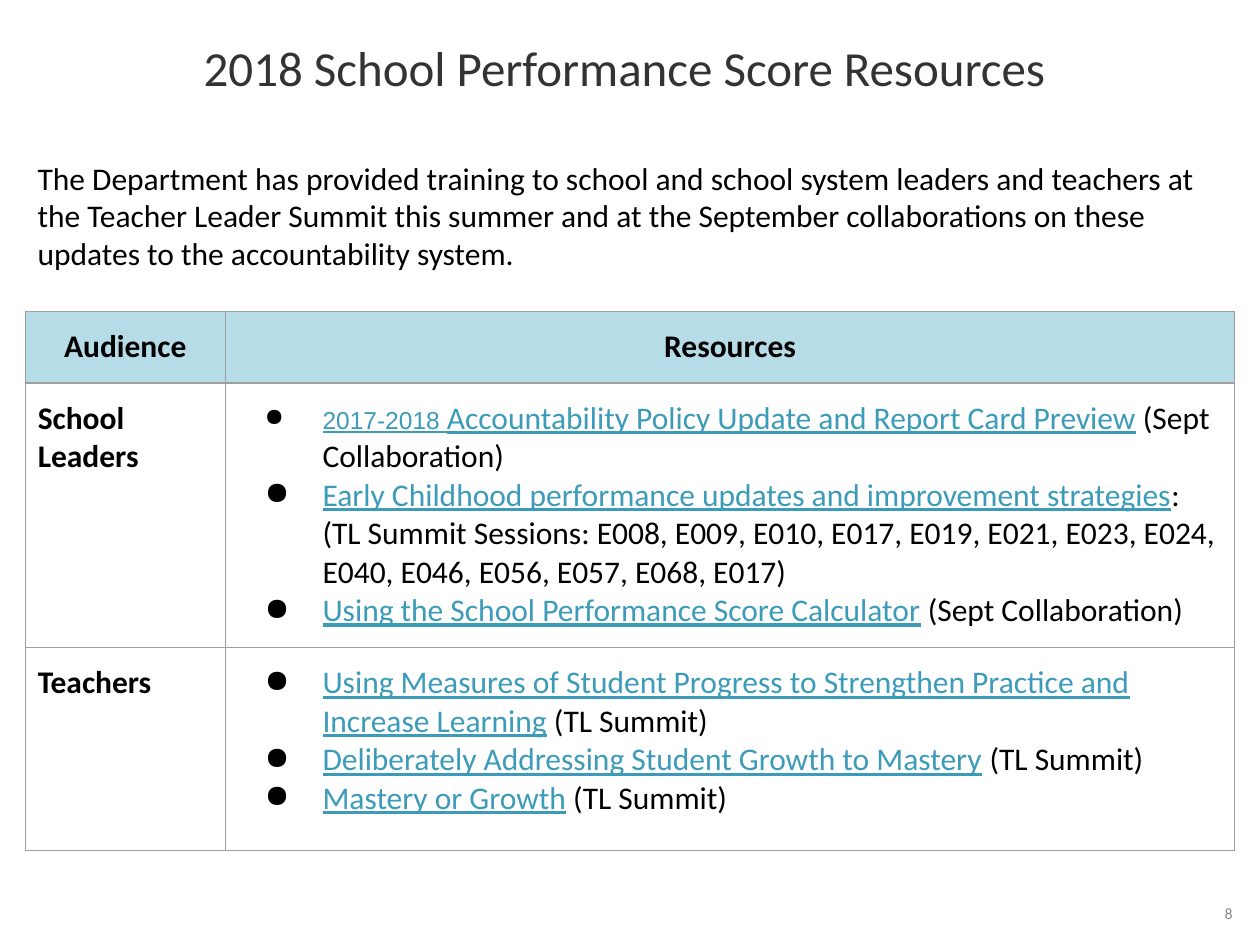
"""Build the slide listing 2018 School Performance Score resources by audience."""
from typing import NamedTuple

from lxml.etree import SubElement
from pptx import Presentation
from pptx.dml.color import RGBColor
from pptx.enum.text import MSO_ANCHOR as Anchor, PP_ALIGN as Align
from pptx.oxml.ns import qn
from pptx.util import Inches, Pt

BLACK, LINK, TITLE, GREY = "000000", "3D9BBA", "333333", "8A8A8A"
HEADER_FILL, BORDER = "B6DDE7", "9E9E9E"


class Span(NamedTuple):
    text: str
    link: bool = False
    small: bool = False


class Audience(NamedTuple):
    name: str
    height: float
    resources: list[list[Span]]


def resource(title: str, note: str) -> list[Span]:
    return [Span(title, link=True), Span(note)]


AUDIENCES = [
    Audience("School Leaders", 2.1, [
        [Span("2017-2018 ", link=True, small=True),
         Span("Accountability Policy Update and Report Card Preview", link=True),
         Span(" ", small=True),
         Span("(Sept Collaboration)")],
        resource("Early Childhood performance updates and improvement strategies",
                 ": (TL Summit Sessions: E008, E009, E010, E017, E019, E021, E023, "
                 "E024, E040, E046, E056, E057, E068, E017)"),
        resource("Using the School Performance Score Calculator", " (Sept Collaboration)"),
    ]),
    Audience("Teachers", 1.61, [
        resource("Using Measures of Student Progress to Strengthen Practice and "
                 "Increase Learning", " (TL Summit)"),
        resource("Deliberately Addressing Student Growth to Mastery", " (TL Summit)"),
        resource("Mastery or Growth", " (TL Summit)"),
    ]),
]


def color(hex_string: str) -> RGBColor:
    return RGBColor.from_string(hex_string)


def style(font, size: float, hex_string: str = BLACK, bold: bool = False) -> None:
    font.name, font.size, font.bold = "Calibri", Pt(size), bold
    font.color.rgb = color(hex_string)


def write(frame, text: str, size: float, hex_string: str = BLACK,
          bold: bool = False, align=Align.LEFT) -> None:
    frame.word_wrap = True
    paragraph = frame.paragraphs[0]
    paragraph.text, paragraph.alignment = text, align
    style(paragraph.font, size, hex_string, bold)


def add_text(slide, box: tuple, text: str, size: float, hex_string: str,
             align=Align.LEFT, anchor=Anchor.TOP) -> None:
    shape = slide.shapes.add_textbox(*map(Inches, box))
    shape.text_frame.vertical_anchor = anchor
    write(shape.text_frame, text, size, hex_string, align=align)


def format_cell(cell, fill: str | None = None) -> None:
    cell.margin_left = cell.margin_right = Inches(0.1)
    cell.margin_top = cell.margin_bottom = Inches(0.13)
    properties = cell._tc.get_or_add_tcPr()
    for side in ("a:lnL", "a:lnR", "a:lnT", "a:lnB"):
        line = SubElement(properties, qn(side), w=str(Pt(0.75)))
        SubElement(SubElement(line, qn("a:solidFill")), qn("a:srgbClr"), val=BORDER)
    if fill:
        cell.fill.solid()
        cell.fill.fore_color.rgb = color(fill)
    else:
        cell.fill.background()


def write_bullet(paragraph, spans: list[Span]) -> None:
    properties = paragraph._p.get_or_add_pPr()
    properties.set("marL", str(Inches(0.67)))
    properties.set("indent", str(Inches(-0.46)))
    SubElement(SubElement(properties, qn("a:buClr")), qn("a:srgbClr"), val=BLACK)
    SubElement(properties, qn("a:buChar"), char="●")
    style(paragraph.font, 18)
    for span in spans:
        run = paragraph.add_run()
        run.text = span.text
        if span.link:
            run.font.underline = True
            run.font.color.rgb = color(LINK)
        if span.small:
            run.font.name, run.font.size = "Arial", Pt(14)


def add_resource_table(slide) -> None:
    heights = [0.57] + [audience.height for audience in AUDIENCES]
    frame = slide.shapes.add_table(len(heights), 2, Inches(0.2), Inches(2.47),
                                   Inches(9.6), Inches(sum(heights)))
    table = frame.table
    table.first_row = table.horz_banding = False
    for column, width in zip(table.columns, (1.59, 8.01)):
        column.width = Inches(width)
    for row, height in zip(table.rows, heights):
        row.height = Inches(height)
    for cell, heading in zip(table.rows[0].cells, ("Audience", "Resources")):
        format_cell(cell, HEADER_FILL)
        write(cell.text_frame, heading, 18, bold=True, align=Align.CENTER)
    for index, audience in enumerate(AUDIENCES, start=1):
        name_cell, list_cell = table.cell(index, 0), table.cell(index, 1)
        format_cell(name_cell)
        write(name_cell.text_frame, audience.name, 18, bold=True)
        format_cell(list_cell)
        frame = list_cell.text_frame
        for position, spans in enumerate(audience.resources):
            paragraph = frame.add_paragraph() if position else frame.paragraphs[0]
            write_bullet(paragraph, spans)


def main() -> None:
    presentation = Presentation()
    presentation.slide_width, presentation.slide_height = Inches(10), Inches(7.5)
    slide = presentation.slides.add_slide(presentation.slide_layouts[5])
    title = slide.shapes.title
    title.left, title.top = Inches(0), Inches(0.02)
    title.width, title.height = Inches(10), Inches(1.08)
    title.text_frame.vertical_anchor = Anchor.MIDDLE
    write(title.text_frame, "2018 School Performance Score Resources ", 28, TITLE,
          align=Align.CENTER)
    title.text_frame.paragraphs[0].line_spacing = 0.9
    add_text(slide, (7.44, 7, 2.44, 0.5), "8", 9, GREY, Align.RIGHT, Anchor.MIDDLE)
    add_resource_table(slide)
    add_text(slide, (0.2, 1.21, 9.6, 1.01),
             "The Department has provided training to school and school system leaders "
             "and teachers at the Teacher Leader Summit this summer and at the September "
             "collaborations on these updates to the accountability system.", 18, BLACK)
    presentation.save("out.pptx")


if __name__ == "__main__":
    main()
